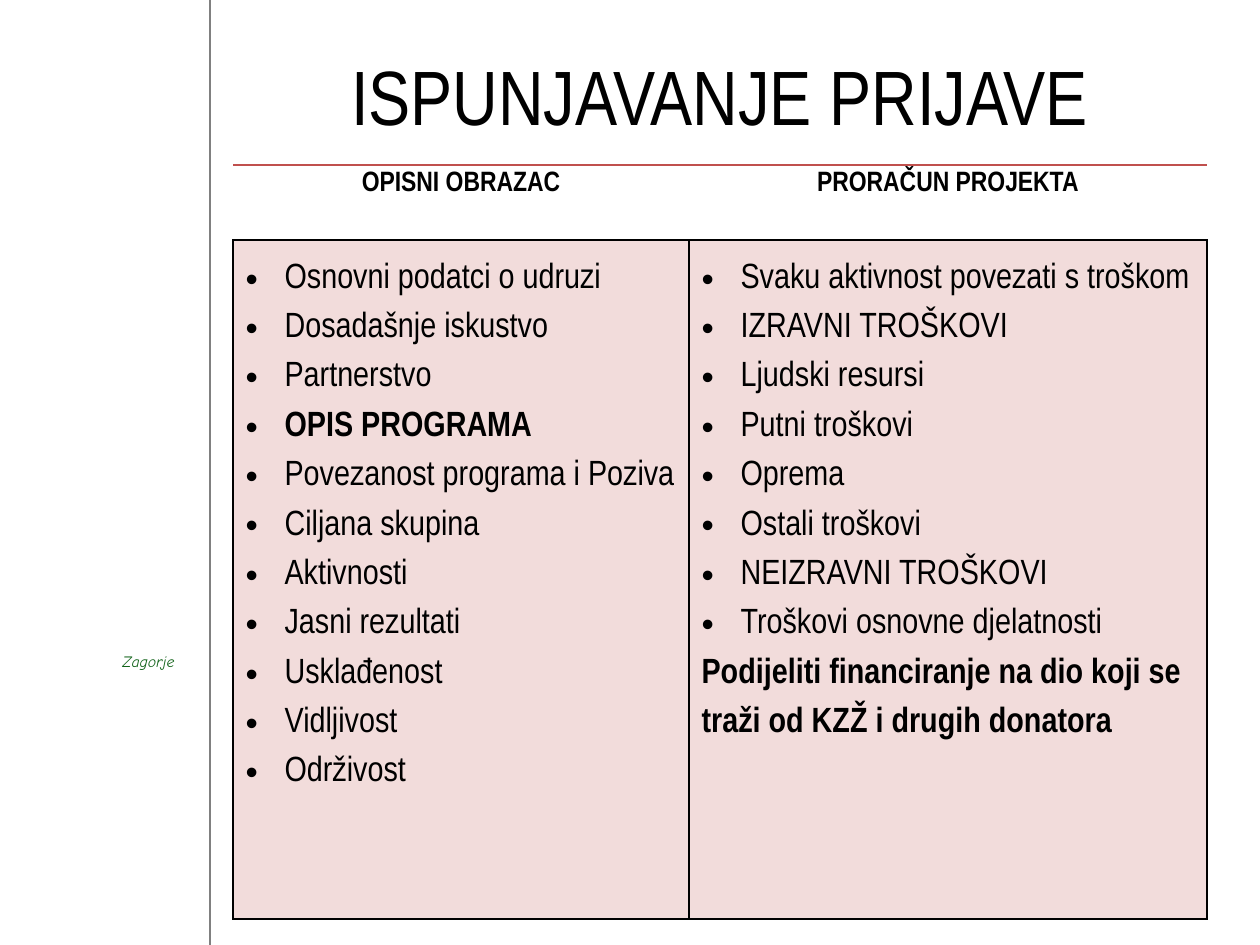
from dataclasses import dataclass

from lxml import etree
from pptx import Presentation
from pptx.dml.color import RGBColor
from pptx.enum.shapes import MSO_CONNECTOR, MSO_SHAPE
from pptx.enum.text import MSO_ANCHOR, PP_ALIGN
from pptx.oxml.ns import qn
from pptx.util import Emu, Pt

STRAIGHT = MSO_CONNECTOR.STRAIGHT
RECTANGLE = MSO_SHAPE.RECTANGLE
MIDDLE, TOP = MSO_ANCHOR.MIDDLE, MSO_ANCHOR.TOP
CENTER, LEFT = PP_ALIGN.CENTER, PP_ALIGN.LEFT
PIXELS_PER_INCH = 126
BLANK_LAYOUT = 6
BULLET_INDENT = 39
NO_STYLE_NO_GRID = "{2D5ABB26-0587-4C30-8999-92F81FD0307C}"


@dataclass(frozen=True)
class Theme:
    black: str = "000000"
    white: str = "FFFFFF"
    gray: str = "808080"
    green: str = "116319"
    accent: str = "C0504D"
    body_alpha: int = 20
    font: str = "Arial Narrow"
    label_font: str = "Comic Neue"
    title_size: int = 44
    header_size: int = 16
    body_size: int = 20
    body_line_height: float = 28.2
    label_size: int = 9
    thin: float = 0.75
    border: float = 1


@dataclass(frozen=True)
class Box:
    left: int
    top: int
    width: int
    height: int

    def emu(self) -> tuple:
        return px(self.left), px(self.top), px(self.width), px(self.height)


@dataclass(frozen=True)
class Line:
    text: str
    bold: bool = False
    bullet: bool = True


@dataclass(frozen=True)
class Column:
    header: str
    width: int
    lines: tuple


THEME = Theme()
COLUMNS = (
    Column("OPISNI OBRAZAC", 456, (
        Line("Osnovni podatci o udruzi"),
        Line("Dosadašnje iskustvo"),
        Line("Partnerstvo"),
        Line("OPIS PROGRAMA", bold=True),
        Line("Povezanost programa i Poziva"),
        Line("Ciljana skupina"),
        Line("Aktivnosti"),
        Line("Jasni rezultati"),
        Line("Usklađenost"),
        Line("Vidljivost"),
        Line("Održivost"),
    )),
    Column("PRORAČUN PROJEKTA", 518, (
        Line("Svaku aktivnost povezati s troškom"),
        Line("IZRAVNI TROŠKOVI"),
        Line("Ljudski resursi"),
        Line("Putni troškovi"),
        Line("Oprema"),
        Line("Ostali troškovi"),
        Line("NEIZRAVNI TROŠKOVI"),
        Line("Troškovi osnovne djelatnosti"),
        Line("Podijeliti financiranje na dio koji se traži od KZŽ i drugih donatora",
             bold=True, bullet=False),
    )),
)
ROW_HEIGHTS = (75, 679)


def px(value: int) -> Emu:
    return Emu(round(value * 914400 / PIXELS_PER_INCH))


def rgb(color: str) -> RGBColor:
    return RGBColor.from_string(color)


def style(paragraph, size: int, color: str = THEME.black, font: str = THEME.font,
          bold: bool = False, italic: bool = False, align=LEFT) -> None:
    paragraph.alignment = align
    for target in (paragraph.font, *(run.font for run in paragraph.runs)):
        target.name = font
        target.size = Pt(size)
        target.color.rgb = rgb(color)
        target.bold = bold
        target.italic = italic


def add_bullet(paragraph) -> None:
    properties = paragraph._p.get_or_add_pPr()
    properties.set("marL", str(px(BULLET_INDENT)))
    properties.set("indent", str(-px(BULLET_INDENT)))
    etree.SubElement(properties, qn("a:buFont")).set("typeface", "Arial")
    etree.SubElement(properties, qn("a:buChar")).set("char", "•")


def set_borders(cell, **colors: str) -> None:
    properties = cell._tc.get_or_add_tcPr()
    sides = [side for side in "LRTB" if side in colors]
    for position, side in enumerate(sides):
        line = etree.Element(qn(f"a:ln{side}"), w=str(Pt(THEME.border)))
        fill = etree.SubElement(line, qn("a:solidFill"))
        etree.SubElement(fill, qn("a:srgbClr")).set("val", colors[side])
        properties.insert(position, line)


def add_divider(slide) -> None:
    divider = slide.shapes.add_connector(STRAIGHT, px(210), 0, px(210), px(945))
    divider.line.color.rgb = rgb(THEME.gray)
    divider.line.width = Pt(THEME.thin)
    etree.SubElement(divider._element.spPr, qn("a:effectLst"))


def add_label(slide, box: Box, text: str) -> None:
    shape = slide.shapes.add_shape(RECTANGLE, *box.emu())
    shape.shadow.inherit = False
    shape.fill.solid()
    shape.fill.fore_color.rgb = rgb(THEME.white)
    shape.line.color.rgb = rgb(THEME.white)
    shape.line.width = Pt(THEME.thin)
    frame = shape.text_frame
    frame.vertical_anchor = TOP
    frame.text = text
    style(frame.paragraphs[0], THEME.label_size, THEME.green, THEME.label_font, italic=True)


def add_title(slide, box: Box, text: str) -> None:
    frame = slide.shapes.add_textbox(*box.emu()).text_frame
    frame.word_wrap = True
    frame.vertical_anchor = MIDDLE
    frame.text = text
    style(frame.paragraphs[0], THEME.title_size, align=CENTER)


def fill_header(cell, text: str) -> None:
    cell.fill.background()
    cell.text = text
    style(cell.text_frame.paragraphs[0], THEME.header_size, bold=True, align=CENTER)
    set_borders(cell, T=THEME.accent, B=THEME.black)


def fill_body(cell, lines: tuple) -> None:
    cell.fill.solid()
    cell.fill.fore_color.rgb = rgb(THEME.accent)
    color = cell._tc.tcPr.find(".//" + qn("a:srgbClr"))
    etree.SubElement(color, qn("a:alpha")).set("val", str(THEME.body_alpha * 1000))
    set_borders(cell, **dict.fromkeys("LRTB", THEME.black))
    cell.text = "\n".join(line.text for line in lines)
    for paragraph, line in zip(cell.text_frame.paragraphs, lines):
        if line.bullet:
            add_bullet(paragraph)
        paragraph.line_spacing = Pt(THEME.body_line_height)
        style(paragraph, THEME.body_size, bold=line.bold)


def add_form_table(slide, left: int, top: int) -> None:
    box = Box(left, top, sum(column.width for column in COLUMNS), sum(ROW_HEIGHTS))
    table = slide.shapes.add_table(len(ROW_HEIGHTS), len(COLUMNS), *box.emu()).table
    table.first_row = table.horz_banding = False
    table._tbl.tblPr.find(qn("a:tableStyleId")).text = NO_STYLE_NO_GRID
    for row, height in zip(table.rows, ROW_HEIGHTS):
        row.height = px(height)
    for index, column in enumerate(COLUMNS):
        table.columns[index].width = px(column.width)
        fill_header(table.cell(0, index), column.header)
        fill_body(table.cell(1, index), column.lines)


def main() -> None:
    presentation = Presentation()
    presentation.slide_width, presentation.slide_height = px(1260), px(945)
    slide = presentation.slides.add_slide(presentation.slide_layouts[BLANK_LAYOUT])
    add_divider(slide)
    add_label(slide, Box(110, 646, 95, 49), "Zagorje")
    add_title(slide, Box(233, 16, 974, 158), "ISPUNJAVANJE PRIJAVE")
    add_form_table(slide, 233, 165)
    presentation.save("out.pptx")


if __name__ == "__main__":
    main()
